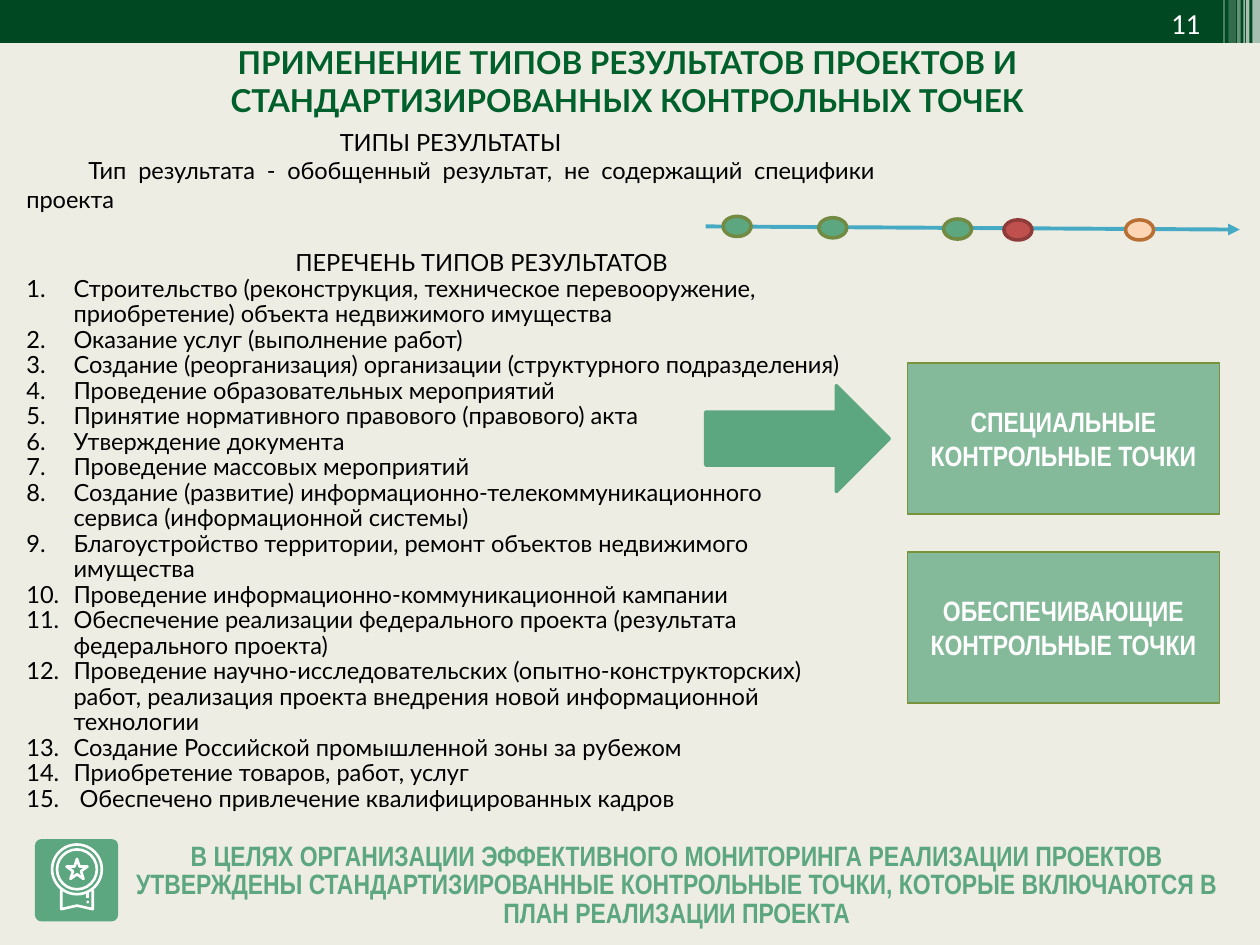
from pptx import Presentation
from pptx.util import Pt
from pptx.dml.color import RGBColor
from pptx.enum.shapes import MSO_SHAPE as SHAPE, MSO_CONNECTOR
from pptx.enum.text import PP_ALIGN as AL, MSO_ANCHOR as ANCHOR
from pptx.oxml.ns import qn
from lxml.etree import SubElement

COLORS = {
    "page": "EDEDE3", "bar": "004821", "title": "00602B", "green": "5CA77F",
    "olive": "77933C", "moss": "738A42", "blue": "46AAC5", "red": "C0504D",
    "maroon": "8E3B39", "peach": "FCD5B5", "brown": "B76F34",
    "white": "FFFFFF", "black": "000000",
}

RESULT_TYPES = [
    "Строительство (реконструкция, техническое перевооружение, приобретение) объекта недвижимого имущества",
    "Оказание услуг (выполнение работ)",
    "Создание (реорганизация) организации (структурного подразделения)",
    "Проведение образовательных мероприятий",
    "Принятие нормативного правового (правового) акта",
    "Утверждение документа",
    "Проведение массовых мероприятий",
    "Создание (развитие) информационно-телекоммуникационного\nсервиса (информационной системы)",
    "Благоустройство территории, ремонт объектов недвижимого имущества",
    "Проведение информационно-коммуникационной кампании",
    "Обеспечение реализации федерального проекта (результата федерального проекта)",
    "Проведение научно-исследовательских (опытно-конструкторских) работ, "
    "реализация проекта внедрения новой информационной технологии",
    "Создание Российской промышленной зоны за рубежом",
    "Приобретение товаров, работ, услуг",
    " Обеспечено привлечение квалифицированных кадров",
]


def rgb(name):
    return RGBColor.from_string(COLORS[name])


def style(sp, fill=None, line=None, width=1, opacity=100):
    sp.shadow.inherit = False
    if fill:
        sp.fill.solid()
        sp.fill.fore_color.rgb = rgb(fill)
        if opacity < 100:
            clr = sp.fill._xPr.find(qn("a:solidFill"))[0]
            SubElement(clr, qn("a:alpha"), val=str(opacity * 1000))
    else:
        sp.fill.background()
    if line:
        sp.line.color.rgb = rgb(line)
        sp.line.width = Pt(width)
    else:
        sp.line.fill.background()
    return sp


def add_shape(s, kind, x, y, w, h, **fmt):
    return style(s.shapes.add_shape(kind, Pt(x), Pt(y), Pt(w), Pt(h)), **fmt)


def add_path(s, points, **fmt):
    pts = [(Pt(x), Pt(y)) for x, y in points]
    fb = s.shapes.build_freeform(*pts[0])
    fb.add_line_segments(pts[1:], close=False)
    return style(fb.convert_to_shape(), **fmt)


def text_frame(s, x, y, w, h, anchor=ANCHOR.TOP):
    tf = s.shapes.add_textbox(Pt(x), Pt(y), Pt(w), Pt(h)).text_frame
    tf.word_wrap = True
    tf.vertical_anchor = anchor
    return tf


def add_text(tf, text, size=13.5, font="Lato", color="black", bold=False, align=AL.LEFT,
             spacing=None, before=0, margin=0, indent=0, numbered=False):
    first = tf.paragraphs[0]
    p = tf.add_paragraph() if first.runs else first
    p.alignment = align
    p.space_before = Pt(before)
    if spacing:
        p.line_spacing = spacing
    pPr = p._p.get_or_add_pPr()
    pPr.set("marL", str(Pt(margin)))
    pPr.set("indent", str(Pt(indent)))
    if numbered:
        SubElement(pPr, qn("a:buFont"), typeface="+mj-lt")
        SubElement(pPr, qn("a:buAutoNum"), type="arabicPeriod")
    for i, part in enumerate(text.split("\n")):
        if i:
            p.add_line_break()
        r = p.add_run()
        r.text = part
        r.font.size, r.font.name, r.font.bold = Pt(size), font, bold
        r.font.color.rgb = rgb(color)


def header(s, x, y, w, h):
    add_shape(s, SHAPE.RECTANGLE, x, y, w, h, fill="bar")
    # stripes: distance from the right edge, width, opacity
    for back, width, opacity in [(4.3, 4.3, 65), (8, 2, 65), (9.5, 1, 60),
                                 (13, 2, 40), (18, 4.3, 20), (21, 1, 30)]:
        add_shape(s, SHAPE.RECTANGLE, x + w - back, y, width, h, fill="white", opacity=opacity)
    tf = text_frame(s, x + w - 195, y - 1.5, 168, 29, ANCHOR.MIDDLE)
    add_text(tf, "11", size=16.6, font="Calibri", color="white", align=AL.RIGHT)


def title(s, x, y, w, h):
    add_text(text_frame(s, x, y, w, h),
             "ПРИМЕНЕНИЕ ТИПОВ РЕЗУЛЬТАТОВ ПРОЕКТОВ И СТАНДАРТИЗИРОВАННЫХ КОНТРОЛЬНЫХ ТОЧЕК",
             size=18, color="title", bold=True, align=AL.CENTER)


def result_types(s, x, y, w, h):
    tf = text_frame(s, x, y, w, h)
    add_text(tf, "ТИПЫ РЕЗУЛЬТАТЫ", align=AL.CENTER, spacing=Pt(18))
    add_text(tf, "Тип результата - обобщенный результат, не содержащий специфики проекта",
             align=AL.JUSTIFY, indent=35.5)
    add_text(tf, "ПЕРЕЧЕНЬ ТИПОВ РЕЗУЛЬТАТОВ", align=AL.CENTER, indent=35.5,
             spacing=0.9, before=22)
    for item in RESULT_TYPES:
        add_text(tf, item, margin=27, indent=-27, spacing=0.9, numbered=True)


def timeline(s, x, y, w, h):
    ln = s.shapes.add_connector(MSO_CONNECTOR.STRAIGHT, Pt(x), Pt(y), Pt(x + w), Pt(y + h))
    ln.line.color.rgb = rgb("blue")
    ln.line.width = Pt(2.25)
    SubElement(ln.line._get_or_add_ln(), qn("a:tailEnd"), type="triangle")
    SubElement(ln._element.spPr, qn("a:effectLst"))
    # milestones: offset of the centre, fill, outline
    for dx, dy, fill, line in [(18, 0, "green", "moss"), (72.7, 0.8, "green", "moss"),
                               (144, 1.5, "green", "moss"), (178.5, 2, "red", "maroon"),
                               (248, 2, "peach", "brown")]:
        add_shape(s, SHAPE.OVAL, x + dx - 8, y + dy - 5.75, 16, 11.5,
                  fill=fill, line=line, width=2)


def control_points(s, x, y, w, h):
    add_shape(s, SHAPE.RIGHT_ARROW, x, y + 13, 105, 60.5, fill="green", line="green", width=2)
    card_w, card_h = 178.5, 86.4
    for i, kind in enumerate(["СПЕЦИАЛЬНЫЕ", "ОБЕСПЕЧИВАЮЩИЕ"]):
        card = add_shape(s, SHAPE.RECTANGLE, x + w - card_w, y + i * (h - card_h), card_w, card_h,
                         fill="green", opacity=72, line="olive", width=0.75)
        tf = card.text_frame
        tf.word_wrap = True
        tf.vertical_anchor = ANCHOR.MIDDLE
        for line in (kind, "КОНТРОЛЬНЫЕ ТОЧКИ"):
            add_text(tf, line, size=16, font="Arial Narrow", color="white",
                     bold=True, align=AL.CENTER)


def medal(s, x, y, w, h):
    tile = add_shape(s, SHAPE.ROUNDED_RECTANGLE, x, y, w, h, fill="green")
    tile.adjustments[0] = 0.076
    stroke = dict(line="white", width=1.5)
    cx, cy = x + 24, y + 17.3
    for radius in (14.2, 11.4):
        add_shape(s, SHAPE.OVAL, cx - radius, cy - radius, 2 * radius, 2 * radius, **stroke)
    add_shape(s, SHAPE.STAR_5_POINT, cx - 6, cy - 6, 12, 11.5, **stroke)
    # ribbon with its small mark
    add_path(s, [(cx - 9, cy + 11.5), (cx - 9, cy + 22.7), (cx, cy + 20.7),
                 (cx + 9, cy + 22.7), (cx + 9, cy + 11.5)], **stroke)
    add_path(s, [(cx + 6.2, cy + 13.5), (cx + 6.2, cy + 16.5)], **stroke)
    add_shape(s, SHAPE.OVAL, cx + 5.4, cy + 17.9, 1.6, 1.6, fill="white")


def conclusion(s, x, y, w, h):
    add_text(text_frame(s, x + 45, y - 1, w - 45, h),
             "В ЦЕЛЯХ ОРГАНИЗАЦИИ ЭФФЕКТИВНОГО МОНИТОРИНГА РЕАЛИЗАЦИИ ПРОЕКТОВ УТВЕРЖДЕНЫ "
             "СТАНДАРТИЗИРОВАННЫЕ КОНТРОЛЬНЫЕ ТОЧКИ, КОТОРЫЕ ВКЛЮЧАЮТСЯ В ПЛАН РЕАЛИЗАЦИИ ПРОЕКТА",
             size=16, font="Arial Narrow", color="green", bold=True,
             align=AL.CENTER, spacing=0.85)
    medal(s, x, y, 47.5, 47)


def main():
    prs = Presentation()
    prs.slide_width, prs.slide_height = Pt(720), Pt(540)
    s = prs.slides.add_slide(prs.slide_layouts[6])
    s.background.fill.solid()
    s.background.fill.fore_color.rgb = rgb("page")

    header(s, 0, 0, 720, 24.5)
    conclusion(s, 20, 479.5, 688.5, 57)
    title(s, 20, 21, 677, 51)
    result_types(s, 8, 67.7, 499, 404.6)
    control_points(s, 403.2, 207.4, 293.7, 194.4)
    timeline(s, 403.2, 129.4, 305.3, 1.8)
    prs.save("out.pptx")


if __name__ == "__main__":
    main()
